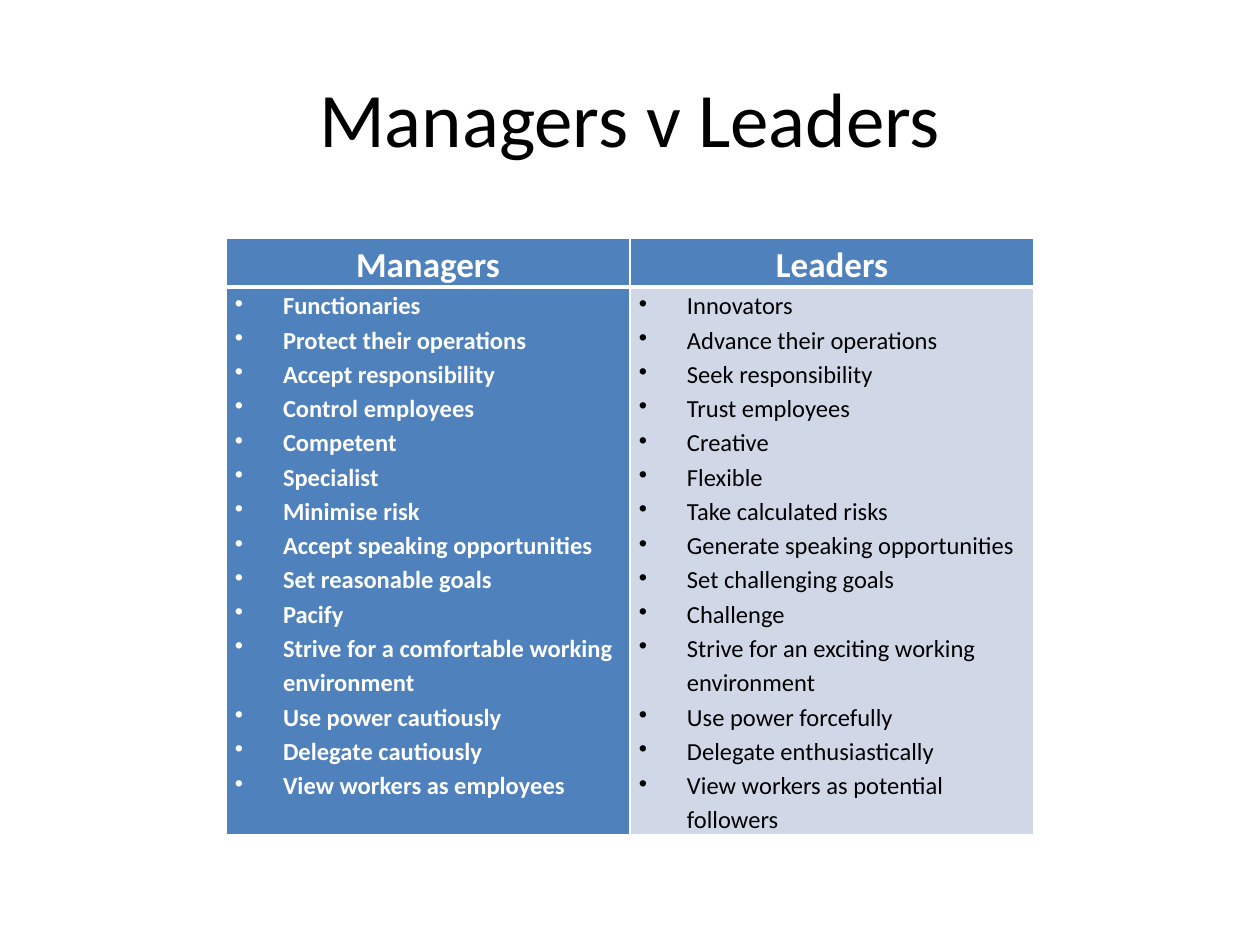
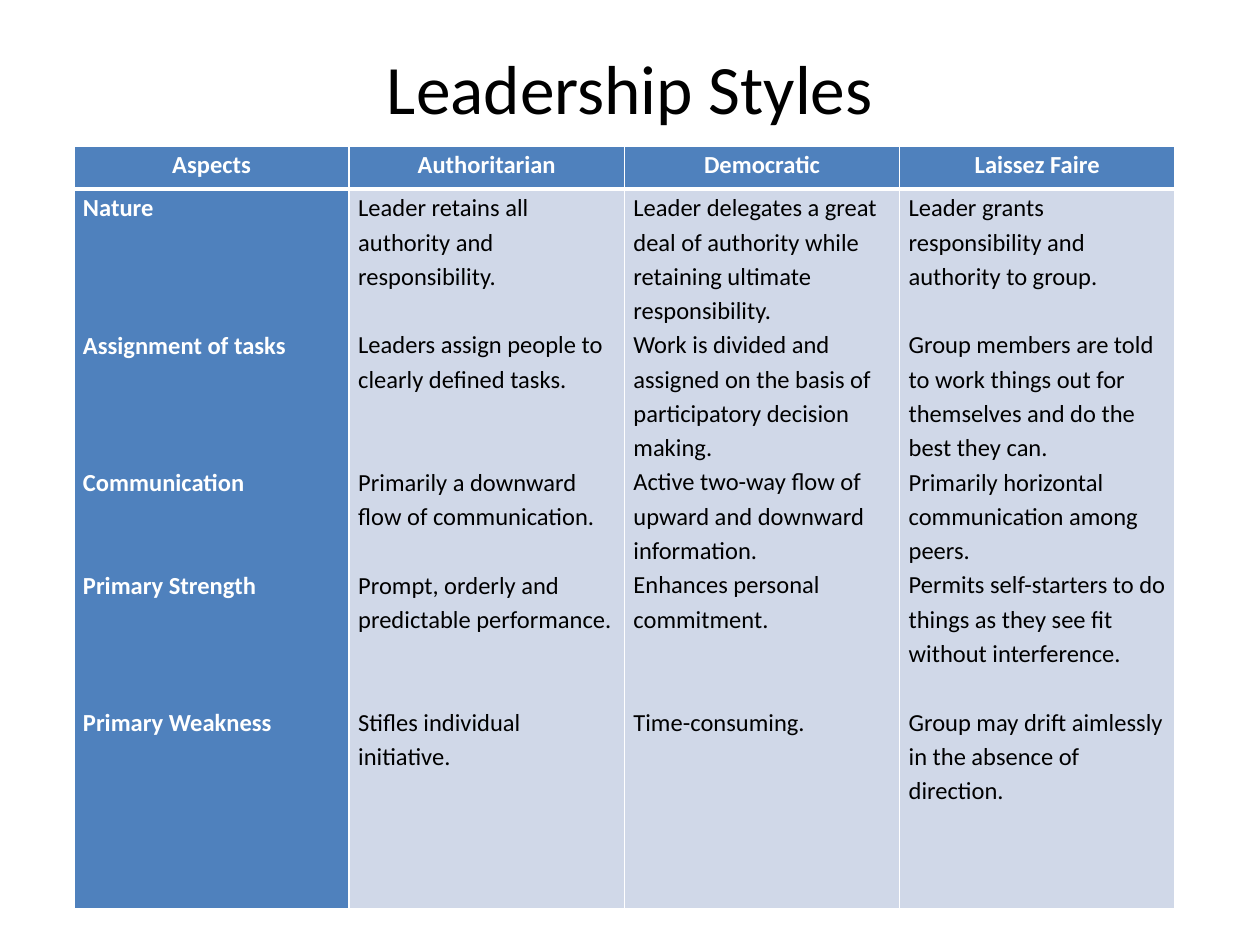
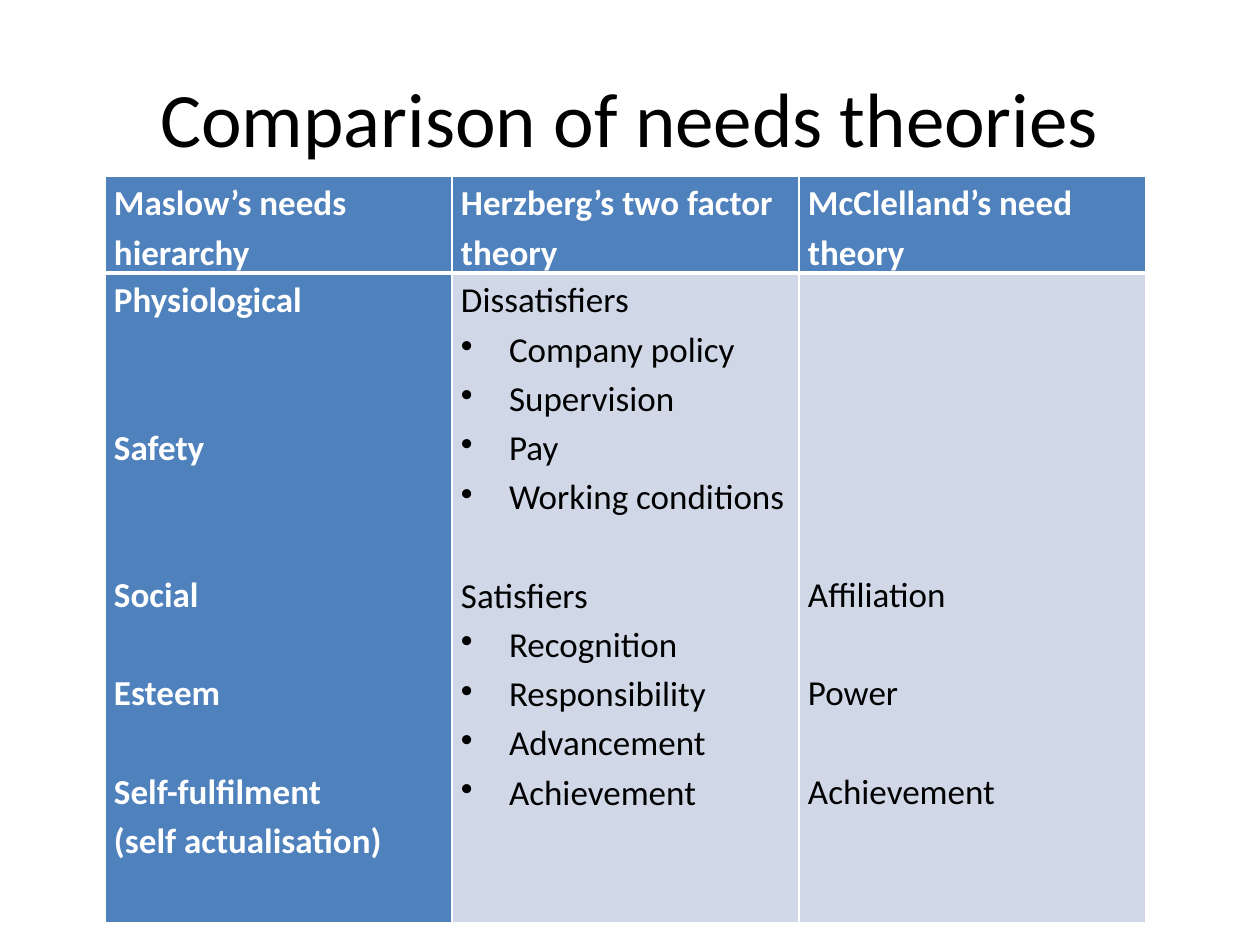
from pptx import Presentation
from pptx.dml.color import RGBColor
from pptx.enum.text import MSO_ANCHOR, PP_ALIGN
from pptx.oxml.ns import qn
from pptx.util import Pt
from lxml import etree

CENTER = PP_ALIGN.CENTER
LEFT = PP_ALIGN.LEFT
MIDDLE = MSO_ANCHOR.MIDDLE

SCALE = 914400 / 126
FONT = "Calibri"
BLACK, WHITE, BLUE, PALE = "000000", "FFFFFF", "4F81BD", "D0D8E8"
SPACING = 1.15
PITCH = 1.22 * SPACING
INSET, INDENT = 9, 48
THIN, THICK = 1, 3


def px(n):
    """Turn pixels into EMU."""
    return round(n * SCALE)


def color(code):
    """Turn a hex string into a colour."""
    return RGBColor.from_string(code)


def style(para, size, code, bold=False):
    """Set the font of a paragraph."""
    font = para.font
    font.name, font.size, font.bold = FONT, Pt(size), bold
    font.color.rgb = color(code)


def line(text, gap=0):
    """Describe a plain paragraph that follows a gap of some lines."""
    return text, gap, False


def dots(*texts):
    """Describe a run of bulleted paragraphs."""
    return [(text, 0, True) for text in texts]


def add_dot(para):
    """Give a paragraph a bullet with a hanging indent."""
    props = para._p.get_or_add_pPr()
    props.set("marL", str(px(INDENT)))
    props.set("indent", str(-px(INDENT)))
    etree.SubElement(props, qn("a:buChar")).set("char", "•")


def add_edges(cell, top, bottom):
    """Draw white lines around a cell."""
    props = cell._tc.get_or_add_tcPr()
    for side, width in zip("LRTB", (THIN, THIN, top, bottom)):
        edge = etree.SubElement(props, qn(f"a:ln{side}"), w=str(Pt(width)))
        fill = etree.SubElement(edge, qn("a:solidFill"))
        etree.SubElement(fill, qn("a:srgbClr"), val=WHITE)


def fill_cell(cell, items, size, back, code, bold, align=LEFT):
    """Write paragraphs into a cell and colour it."""
    cell.margin_left = cell.margin_right = px(INSET)
    cell.margin_top = Pt(items[0][1] * size * PITCH)
    cell.margin_bottom = 0
    cell.fill.solid()
    cell.fill.fore_color.rgb = color(back)
    frame = cell.text_frame
    for i, (text, gap, dotted) in enumerate(items):
        para = frame.add_paragraph() if i else frame.paragraphs[0]
        para.text = text
        para.alignment = align
        para.line_spacing = SPACING
        para.space_before = Pt(gap * size * PITCH if i else 0)
        if dotted:
            add_dot(para)
        style(para, size, code, bold)


def add_title(slide, text, height=157, size=44):
    """Add the centred title."""
    box = slide.shapes.add_textbox(px(63), px(38), px(1134), px(height))
    frame = box.text_frame
    frame.word_wrap = True
    frame.vertical_anchor = MIDDLE
    para = frame.paragraphs[0]
    para.text = text
    para.alignment = CENTER
    style(para, size, BLACK)


def add_grid(slide, area, tall, heads, bodies, sizes, align=CENTER):
    """Add a table with a header row and one body row."""
    x, y, w, h = map(px, area)
    count = len(heads)
    table = slide.shapes.add_table(2, count, x, y, w, h).table
    table.horz_banding = False
    table.rows[0].height = px(tall)
    table.rows[1].height = h - px(tall)
    for i, (head, body) in enumerate(zip(heads, bodies)):
        table.columns[i].width = w // count
        top, low = table.cell(0, i), table.cell(1, i)
        add_edges(top, THIN, THICK)
        add_edges(low, THICK, THIN)
        fill_cell(top, [line(head)], sizes[0], BLUE, WHITE, True, align)
        back, code = (PALE, BLACK) if i else (BLUE, WHITE)
        fill_cell(low, body, sizes[1], back, code, i == 0)


def add_roles(slide):
    """Build the slide on managers and leaders."""
    add_title(slide, "Managers v Leaders")
    managers = dots(
        "Functionaries", "Protect their operations", "Accept responsibility",
        "Control employees", "Competent", "Specialist", "Minimise risk",
        "Accept speaking opportunities", "Set reasonable goals", "Pacify",
        "Strive for a comfortable working environment",
        "Use power cautiously", "Delegate cautiously",
        "View workers as employees")
    leaders = dots(
        "Innovators", "Advance their operations", "Seek responsibility",
        "Trust employees", "Creative", "Flexible", "Take calculated risks",
        "Generate speaking opportunities", "Set challenging goals",
        "Challenge", "Strive for an exciting working environment",
        "Use power forcefully", "Delegate enthusiastically",
        "View workers as potential followers")
    add_grid(slide, (226, 238, 808, 597), 49, ["Managers", "Leaders"],
             [managers, leaders], (20, 14))


def add_styles(slide):
    """Build the slide on leadership styles."""
    add_title(slide, "Leadership Styles", 97, 39.6)
    aspects = [
        line("Nature"), line("Assignment of tasks", 3),
        line("Communication", 3), line("Primary Strength", 2),
        line("Primary Weakness", 3)]
    strict = [
        line("Leader retains all authority and responsibility."),
        line("Leaders assign people to clearly defined tasks.", 1),
        line("Primarily a downward flow of communication.", 2),
        line("Prompt, orderly and predictable performance.", 1),
        line("Stifles individual initiative.", 2)]
    shared = [
        line("Leader delegates a great deal of authority while retaining "
             "ultimate responsibility."),
        line("Work is divided and assigned on the basis of participatory "
             "decision making."),
        line("Active two-way flow of upward and downward information."),
        line("Enhances personal commitment."),
        line("Time-consuming.", 2)]
    free = [
        line("Leader grants responsibility and authority to group."),
        line("Group members are told to work things out for themselves and "
             "do the best they can.", 1),
        line("Primarily horizontal communication among peers."),
        line("Permits self-starters to do things as they see fit without "
             "interference."),
        line("Group may drift aimlessly in the absence of direction.", 1)]
    add_grid(slide, (74, 146, 1101, 763), 43,
             ["Aspects", "Authoritarian", "Democratic", "Laissez Faire"],
             [aspects, strict, shared, free], (14, 14))


def add_needs(slide):
    """Build the slide on needs theories."""
    add_title(slide, "Comparison of needs theories")
    ladder = [
        line("Physiological"), line("Safety", 2), line("Social", 2),
        line("Esteem", 1), line("Self-fulfilment", 1),
        line("(self actualisation)")]
    factors = [
        line("Dissatisfiers"),
        *dots("Company policy", "Supervision", "Pay", "Working conditions"),
        line("Satisfiers", 1),
        *dots("Recognition", "Responsibility", "Advancement", "Achievement")]
    drives = [line("Affiliation", 6), line("Power", 1),
              line("Achievement", 1)]
    add_grid(slide, (105, 176, 1041, 747), 97,
             ["Maslow’s needs hierarchy", "Herzberg’s two factor theory",
              "McClelland’s need theory"],
             [ladder, factors, drives], (20, 20), LEFT)


def main():
    """Build and save the slides."""
    deck = Presentation()
    deck.slide_width, deck.slide_height = px(1260), px(945)
    blank = deck.slide_layouts[6]
    for build in (add_roles, add_styles, add_needs):
        build(deck.slides.add_slide(blank))
    deck.save("out.pptx")


if __name__ == "__main__":
    main()
